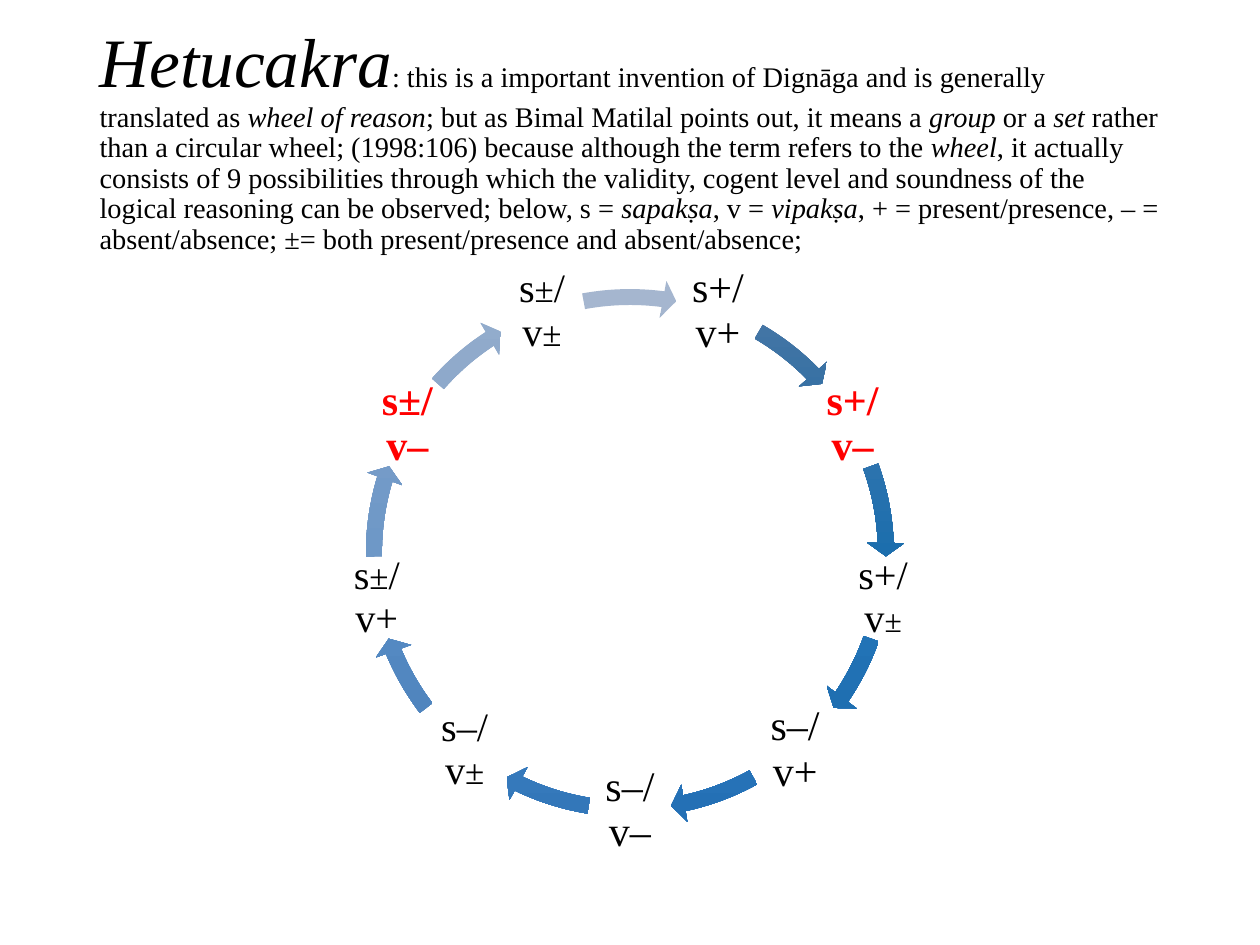
from copy import deepcopy
from dataclasses import dataclass
from math import cos, radians, sin

from pptx import Presentation
from pptx.dml.color import RGBColor
from pptx.enum.shapes import MSO_SHAPE
from pptx.enum.text import MSO_ANCHOR, MSO_AUTO_SIZE, PP_ALIGN
from pptx.oxml.ns import qn
from pptx.util import Inches, Pt

ARROW = MSO_SHAPE.CIRCULAR_ARROW
MIDDLE = MSO_ANCHOR.MIDDLE
NO_FIT = MSO_AUTO_SIZE.NONE
LEFT, CENTER = PP_ALIGN.LEFT, PP_ALIGN.CENTER

FONT = "Times New Roman"
BLACK, RED = "000000", "FF0000"
CX, CY = 5, 4.39
RADIUS = 2.04
LABEL = 0.66
RING = 4.36
STEP = 40
FIRST_ANGLE = -70
ADJ_PER_DEGREE = 0.6


@dataclass
class Run:
    text: str
    size: float
    italic: bool = False


@dataclass
class Reason:
    runs: list[Run]
    start: float
    end: float
    colors: tuple[str, str, str]
    valid: bool = False


TITLE = [
    Run("Hetucakra", 39.6, True),
    Run(": this is a important invention of Dignāga and is generally translated as ", 16.2),
    Run("wheel of reason", 16.2, True),
    Run("; but as Bimal Matilal points out, it means a ", 16.2),
    Run("group", 16.2, True),
    Run(" or a ", 16.2),
    Run("set", 16.2, True),
    Run(" rather than a circular wheel; (1998:106) because although the term refers to the ", 16.2),
    Run("wheel", 16.2, True),
    Run(", it actually consists of 9 possibilities through which the validity, cogent level "
        "and soundness of the logical reasoning can be observed; below, s = ", 16.2),
    Run("sapakṣa", 16.2, True),
    Run(", v = ", 16.2),
    Run("vipakṣa", 16.2, True),
    Run(", + = present/presence, – = absent/absence; ±= both present/presence "
        "and absent/absence;", 16.2),
]

REASONS = [
    Reason([Run("s+/v+", 24)], 300.2, 315.63, ("4D78A6", "1466A0", "0C5B94")),
    Reason([Run("s+/ v–", 24)], 340.18, 357.73, ("507FB2", "1C6EAD", "1363A0"), True),
    Reason([Run("s+/v", 23), Run("±", 18)], 19.55, 34.23, ("5386BE", "2576BA", "1B6AAB")),
    Reason([Run("s–/v+", 24)], 61.2, 77.74, ("588DC8", "307EC5", "2470B5")),
    Reason([Run("s–/v–", 24)], 99.27, 115.8, ("6393CA", "4286C9", "3377B9")),
    Reason([Run("s–/v", 23), Run("±", 20)], 142.77, 157.45, ("739BC9", "598EC7", "497EB7")),
    Reason([Run("s", 23), Run("±", 20), Run("/v+", 23)], 179.28, 196.82,
           ("84A3CA", "6E98C7", "5D86B5")),
    Reason([Run("s±/v–", 24)], 221.38, 236.8, ("94ADCC", "83A2C8", "718FB5"), True),
    Reason([Run("s", 23), Run("±", 20), Run("/v", 23), Run("±", 20)], 259.57, 277.43,
           ("A5B6CF", "96ACCA", "8399B7")),
]


def rgb(color: str) -> RGBColor:
    return RGBColor.from_string(color)


def write_text(sp, runs: list[Run], *, color: str = BLACK, bold: bool = False,
               align=LEFT, inset: float | None = None) -> None:
    tf = sp.text_frame
    tf.word_wrap = True
    tf.auto_size = NO_FIT
    tf.vertical_anchor = MIDDLE
    if inset is not None:
        tf.margin_left = tf.margin_right = Inches(inset)
        tf.margin_top = tf.margin_bottom = Inches(inset)
    p = tf.paragraphs[0]
    p.alignment = align
    p.line_spacing = 0.9
    for run in runs:
        r = p.add_run()
        r.text = run.text
        r.font.name = FONT
        r.font.size = Pt(run.size)
        r.font.italic = run.italic
        r.font.bold = bold
        r.font.color.rgb = rgb(color)


def add_title(slide) -> None:
    sp = slide.shapes.title
    sp.left, sp.top = Inches(0.69), Inches(0.4)
    sp.width, sp.height = Inches(8.62), Inches(1.45)
    write_text(sp, TITLE)


def add_label(slide, reason: Reason, angle: float) -> None:
    x = CX + RADIUS * cos(radians(angle)) - LABEL / 2
    y = CY + RADIUS * sin(radians(angle)) - LABEL / 2
    sp = slide.shapes.add_textbox(Inches(x), Inches(y), Inches(LABEL), Inches(LABEL))
    write_text(sp, reason.runs, color=RED if reason.valid else BLACK,
               bold=reason.valid, align=CENTER, inset=0.03)


def fill_gradient(sp, colors: tuple[str, str, str]) -> None:
    sp.fill.gradient()
    sp.fill.gradient_angle = 270
    stops = sp._element.spPr.find(".//" + qn("a:gsLst"))
    stops.append(deepcopy(stops[0]))
    for i, (stop, color) in enumerate(zip(sp.fill.gradient_stops, colors)):
        stop.position = i / 2
        stop.color.rgb = rgb(color)


def add_arrow(slide, reason: Reason) -> None:
    sp = slide.shapes.add_shape(ARROW, Inches(CX - RING / 2), Inches(CY - RING / 2),
                                Inches(RING), Inches(RING))
    sp.shadow.inherit = False
    sp.line.fill.background()
    adjustments = (0.029, 3 * ADJ_PER_DEGREE, reason.end * ADJ_PER_DEGREE,
                   reason.start * ADJ_PER_DEGREE, 0.034)
    for i, value in enumerate(adjustments):
        sp.adjustments[i] = value
    fill_gradient(sp, reason.colors)


def main() -> None:
    prs = Presentation()
    prs.slide_width, prs.slide_height = Inches(10), Inches(7.5)
    slide = prs.slides.add_slide(prs.slide_layouts[5])
    add_title(slide)
    for i, reason in enumerate(REASONS):
        add_label(slide, reason, FIRST_ANGLE + i * STEP)
        add_arrow(slide, reason)
    prs.save("out.pptx")


if __name__ == "__main__":
    main()
